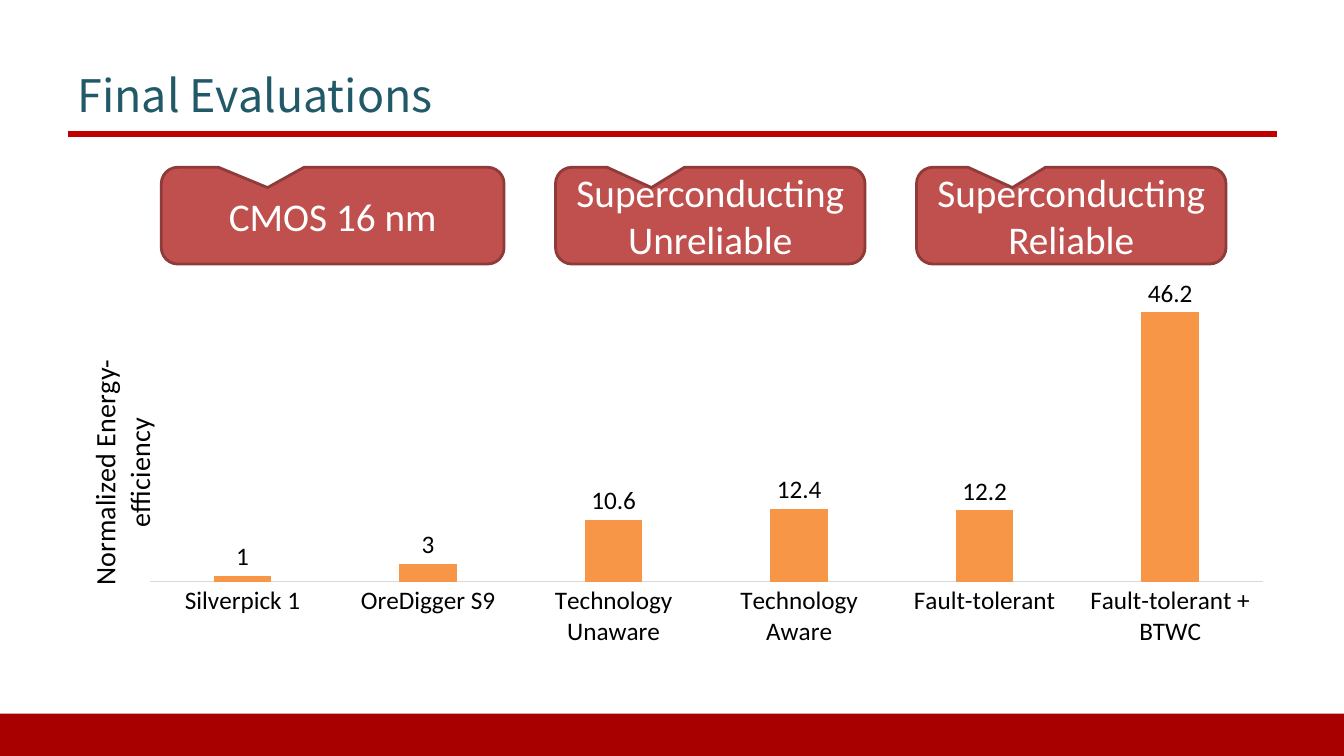
from dataclasses import dataclass

from lxml import etree
from pptx import Presentation
from pptx import util as u
from pptx.chart.data import CategoryChartData
from pptx.dml.color import RGBColor
from pptx.enum import chart as charts, shapes, text
from pptx.oxml.ns import qn


@dataclass(frozen=True)
class Theme:
    heading_font: str = "Noto Sans CJK KR"
    body_font: str = "Calibri"
    heading: str = "215968"
    rule: str = "C00000"
    footer: str = "A80000"
    callout: str = "C0504D"
    callout_edge: str = "8E3B39"
    bar: str = "F79646"
    axis: str = "D9D9D9"
    ink: str = "000000"
    paper: str = "FFFFFF"
    heading_size: int = 32
    callout_size: int = 28
    axis_title_size: int = 20
    label_size: int = 18


THEME = Theme()
EFFICIENCY = {
    "Silverpick 1": 1,
    "OreDigger S9": 3,
    "Technology Unaware": 10.6,
    "Technology Aware": 12.4,
    "Fault-tolerant": 12.2,
    "Fault-tolerant + BTWC": 46.2,
}
TECHNOLOGIES = [
    ("CMOS 16 nm", 0.93, 3.4),
    ("Superconducting Unreliable", 4.84, 3.07),
    ("Superconducting Reliable", 8.42, 3.07),
]


def rgb(color):
    return RGBColor.from_string(color)


def paint(part, color):
    part.fill.solid()
    part.fill.fore_color.rgb = rgb(color)


def style_font(font, size, color, face=THEME.body_font):
    font.size = u.Pt(size)
    font.color.rgb = rgb(color)
    font.name = face
    font.bold = False


def style_line(line, color, width):
    line.color.rgb = rgb(color)
    line.width = u.Pt(width)


def write(paragraph, wording, *style):
    run = paragraph.add_run()
    run.text = wording
    style_font(run.font, *style)


def set_layout(parent, **settings):
    layout = parent.find(qn("c:layout"))
    if layout is None:
        layout = etree.Element(qn("c:layout"))
        parent.insert(0, layout)
    manual = etree.SubElement(layout, qn("c:manualLayout"))
    for setting, value in settings.items():
        etree.SubElement(manual, qn(f"c:{setting}")).set("val", str(value))


def add_footer(slide, left, top, width, height):
    band = slide.shapes.add_shape(
        shapes.MSO_SHAPE.RECTANGLE, *map(u.Inches, (left, top, width, height)))
    band.shadow.inherit = False
    paint(band, THEME.footer)
    band.line.fill.background()


def add_heading(slide, left, top, width, height):
    heading = slide.shapes.add_textbox(*map(u.Inches, (left, top, width, height)))
    frame = heading.text_frame
    frame.word_wrap = True
    frame.vertical_anchor = text.MSO_ANCHOR.BOTTOM
    write(frame.paragraphs[0], "Final Evaluations",
          THEME.heading_size, THEME.heading, THEME.heading_font)

    rule_y = top + height + 0.08
    rule = slide.shapes.add_connector(
        shapes.MSO_CONNECTOR.STRAIGHT,
        *map(u.Inches, (left, rule_y, left + width, rule_y)))
    style_line(rule.line, THEME.rule, 4)
    etree.SubElement(rule._element.spPr, qn("a:effectLst"))


def add_efficiency_chart(slide, left, top, width, height):
    data = CategoryChartData()
    data.categories = EFFICIENCY.keys()
    data.add_series("Series 1", EFFICIENCY.values())
    chart = slide.shapes.add_chart(
        charts.XL_CHART_TYPE.COLUMN_CLUSTERED,
        *map(u.Inches, (left, top, width, height)), data).chart
    chart.has_title = False
    chart.has_legend = False
    style_font(chart.font, 10, THEME.ink)
    set_layout(chart._chartSpace.chart.plotArea, layoutTarget="inner",
               xMode="edge", yMode="edge", x=0.068, y=0.064, w=0.92, h=0.71)

    plot = chart.plots[0]
    plot.gap_width = 222
    plot.overlap = 98
    plot.vary_by_categories = False
    bars = plot.series[0]
    paint(bars.format, THEME.bar)
    labels = bars.data_labels
    labels.show_value = True
    labels.position = charts.XL_LABEL_POSITION.OUTSIDE_END
    style_font(labels.font, THEME.label_size, THEME.ink)

    designs = chart.category_axis
    designs.major_tick_mark = charts.XL_TICK_MARK.NONE
    style_font(designs.tick_labels.font, THEME.label_size, THEME.ink)
    style_line(designs.format.line, THEME.axis, 0.75)

    efficiency = chart.value_axis
    efficiency.minimum_scale = 0
    efficiency.maximum_scale = 50
    efficiency.visible = False
    style_line(efficiency.major_gridlines.format.line, THEME.paper, 0.75)
    caption = efficiency.axis_title
    write(caption.text_frame.paragraphs[0], "Normalized Energy-efficiency",
          THEME.axis_title_size, THEME.ink)
    body = caption._element.find(".//" + qn("a:bodyPr"))
    body.set("rot", "-5400000")
    body.set("vert", "horz")
    set_layout(caption._element, xMode="edge", yMode="edge", x=0.01, y=0.22)


def add_callout(slide, wording, left, top, width, height):
    callout = slide.shapes.add_shape(
        shapes.MSO_SHAPE.ROUNDED_RECTANGULAR_CALLOUT,
        *map(u.Inches, (left, top, width, height)))
    for index, value in enumerate((-0.19, -0.29, 0.17)):
        callout.adjustments[index] = value
    callout.shadow.inherit = False
    paint(callout, THEME.callout)
    style_line(callout.line, THEME.callout_edge, 2)
    frame = callout.text_frame
    frame.word_wrap = True
    frame.vertical_anchor = text.MSO_ANCHOR.MIDDLE
    paragraph = frame.paragraphs[0]
    paragraph.alignment = text.PP_ALIGN.CENTER
    write(paragraph, wording, THEME.callout_size, THEME.paper)


def add_technologies(slide, left, top, height):
    for wording, offset, width in TECHNOLOGIES:
        add_callout(slide, wording, left + offset, top, width, height)


def main():
    deck = Presentation()
    deck.slide_width = u.Inches(13.33)
    deck.slide_height = u.Inches(7.5)
    slide = deck.slides.add_slide(deck.slide_layouts[6])
    add_footer(slide, 0, 7.08, 13.33, 0.42)
    add_heading(slide, 0.67, 0.5, 12, 0.75)
    add_efficiency_chart(slide, 0.67, 2.62, 12, 4.07)
    add_technologies(slide, 0.67, 1.66, 0.96)
    deck.save("out.pptx")


if __name__ == "__main__":
    main()
